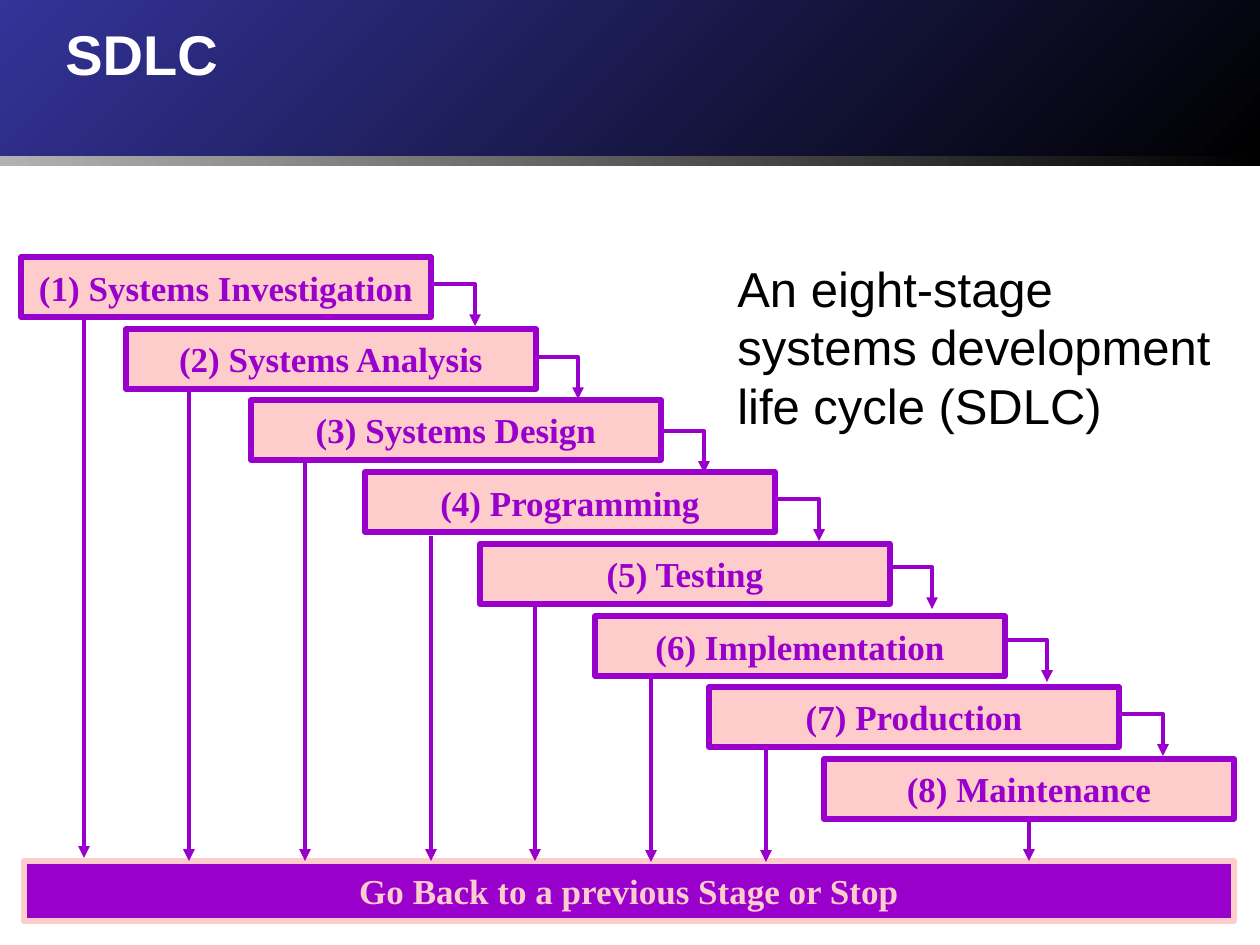
import pptx
import pptx.util
import pptx.dml.color
import pptx.enum.shapes
import pptx.enum.text
import pptx.oxml
import pptx.oxml.ns

PX = 914400 // 126
PURPLE, PINK = "9900CC", "FFCCCC"
SERIF, SANS = "Times New Roman", "Arial"
ELBOW = 42

BANDS = [
    ((0, 0, 1260, 166), ("333399", "000000"), 315),
    ((0, 156, 1260, 10), ("B2B2B2", "000000"), 0),
]
TITLE = "SDLC"
CAPTION = "An eight-stage systems development life cycle (SDLC)"
OUTCOME = "Go Back to a previous Stage or Stop"
STAGES = [
    ("Systems Investigation", 21, (84, 318, 858), (433, 284)),
    ("Systems Analysis", 126, (189, 388, 861), (536, 357)),
    ("Systems Design", 251, (305, 462, 861), (662, 431)),
    ("Programming", 365, (431, 536, 861), (777, 499)),
    ("Testing", 480, (535, 604, 861), (890, 567)),
    ("Implementation", 595, (651, 674, 862), (1005, 640)),
    ("Production", 709, (766, 748, 862), (1121, 714)),
    ("Maintenance", 824, (1029, 819, 861), None),
]
FIRST_TOP, STAGE_STEP = 257, 71.7
STAGE_WIDTH, BOX_HEIGHT = 410, 60


def emu(*lengths):
    return [length * PX for length in lengths]


def colour(value):
    return pptx.dml.color.RGBColor.from_string(value)


def add_xml(parent, xml):
    element = pptx.oxml.parse_xml(
        xml.replace(" ", f" {pptx.oxml.ns.nsdecls('a')} ", 1))
    parent.append(element)
    return element


def write(frame, text, size, font, shade, bold, align, anchor):
    frame.word_wrap = True
    frame.vertical_anchor = anchor
    paragraph = frame.paragraphs[0]
    paragraph.alignment = align
    run = paragraph.add_run()
    run.text = text
    run.font.size = pptx.util.Pt(size)
    run.font.name = font
    run.font.bold = bold
    run.font.color.rgb = colour(shade)
    return run


def add_rectangle(slide, place):
    rectangle = slide.shapes.add_shape(
        pptx.enum.shapes.MSO_SHAPE.RECTANGLE, *emu(*place))
    rectangle.shadow.inherit = False
    return rectangle


def add_band(slide, place, shades, angle):
    band = add_rectangle(slide, place)
    band.line.fill.background()
    band.fill.gradient()
    band.fill.gradient_angle = angle
    for stop, shade, position in zip(band.fill.gradient_stops, shades, (0, 1)):
        stop.color.rgb = colour(shade)
        stop.position = position


def add_box(slide, place, text, fill, ink):
    box = add_rectangle(slide, place)
    box.fill.solid()
    box.fill.fore_color.rgb = colour(fill)
    box.line.color.rgb = colour(ink)
    box.line.width = pptx.util.Pt(3)
    write(box.text_frame, text, 20, SERIF, ink, True,
          pptx.enum.text.PP_ALIGN.CENTER, pptx.enum.text.MSO_ANCHOR.MIDDLE)


def style_arrow(arrow):
    arrow.line.color.rgb = colour(PURPLE)
    arrow.line.width = pptx.util.Pt(2.25)
    add_xml(arrow.line._get_or_add_ln(), '<a:tailEnd type="triangle"/>')


def add_drop(slide, x, top, bottom):
    drop = slide.shapes.add_connector(
        pptx.enum.shapes.MSO_CONNECTOR.STRAIGHT, *emu(x, top, x, bottom))
    style_arrow(drop)
    add_xml(drop._element.spPr, "<a:effectLst />")


def add_elbow(slide, x, y):
    builder = slide.shapes.build_freeform(x, y, scale=PX)
    builder.add_line_segments(
        [(x + ELBOW, y), (x + ELBOW, y + ELBOW)], close=False)
    elbow = builder.convert_to_shape()
    elbow.fill.background()
    style_arrow(elbow)
    elbow.shadow.inherit = False


def add_text(slide, place, text, size, shade, bold):
    label = slide.shapes.add_textbox(*emu(*place))
    return write(label.text_frame, text, size, SANS, shade, bold,
                 pptx.enum.text.PP_ALIGN.LEFT, pptx.enum.text.MSO_ANCHOR.TOP)


def main():
    deck = pptx.Presentation()
    deck.slide_width, deck.slide_height = emu(1260, 945)
    slide = deck.slides.add_slide(deck.slide_layouts[6])

    for place, shades, angle in BANDS:
        add_band(slide, place, shades, angle)

    add_box(slide, (24, 861, 1210, BOX_HEIGHT), OUTCOME, PURPLE, PINK)
    for index, (name, left, _, _) in enumerate(STAGES):
        top = round(FIRST_TOP + index * STAGE_STEP)
        add_box(slide, (left, top, STAGE_WIDTH, BOX_HEIGHT),
                f"({index + 1}) {name}", PINK, PURPLE)
    for _, _, drop, elbow in STAGES:
        add_drop(slide, *drop)
        if elbow:
            add_elbow(slide, *elbow)

    add_text(slide, (725, 252, 506, 189), CAPTION, 28, "000000", False)
    title = add_text(slide, (53, 13, 1144, 126), TITLE, 32, "FFFFFF", True)
    shadow = pptx.oxml.parse_xml(
        f'<a:effectLst {pptx.oxml.ns.nsdecls("a")}>'
        '<a:outerShdw dist="35921" dir="2700000">'
        '<a:srgbClr val="000000"/></a:outerShdw></a:effectLst>')
    title.font.fill._xPr.insert(1, shadow)

    deck.save("out.pptx")


if __name__ == "__main__":
    main()
